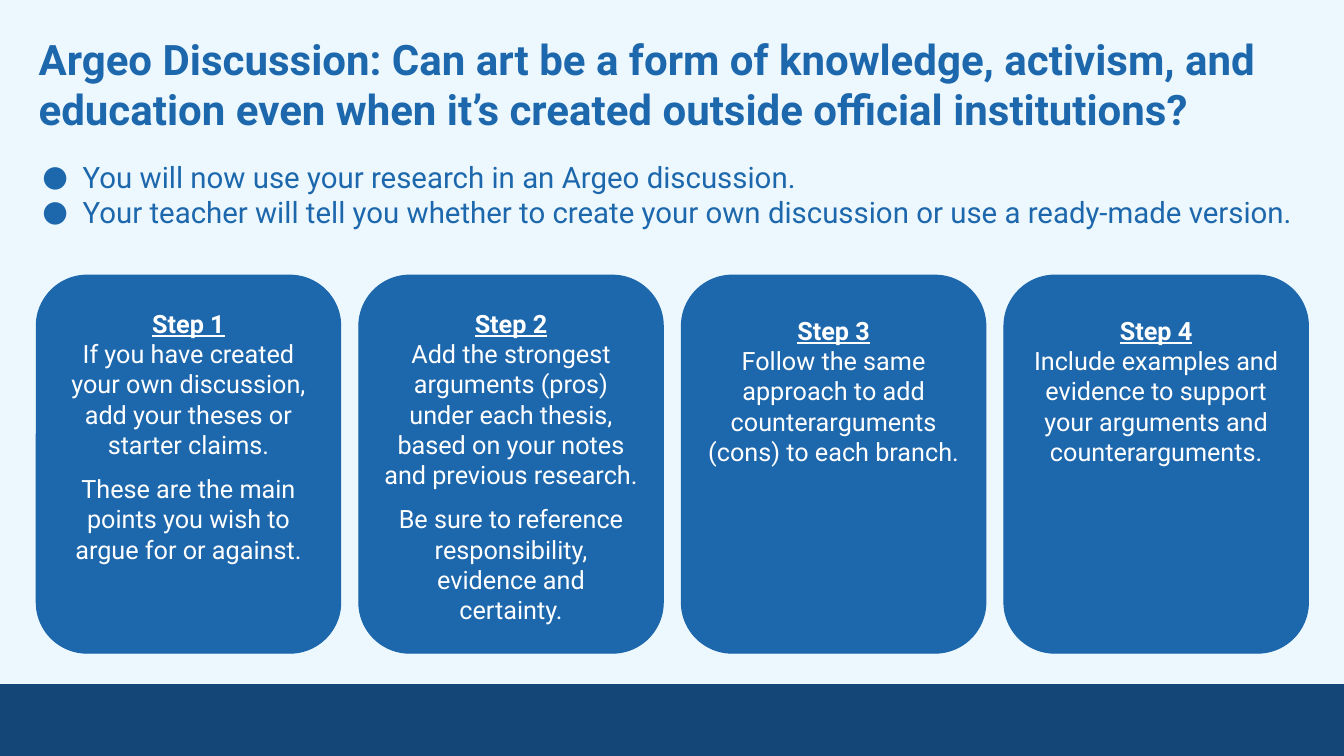
from lxml import etree
from pptx import Presentation
from pptx import util as u
from pptx.dml.color import RGBColor
from pptx.enum import shapes, text
from pptx.oxml.ns import qn

THEME = {
    "font": "Roboto",
    "sky": RGBColor.from_string("ECF8FE"),
    "blue": RGBColor.from_string("1D67AC"),
    "navy": RGBColor.from_string("144777"),
    "white": RGBColor.from_string("FFFFFF"),
    "title_size": u.Pt(30),
    "list_size": u.Pt(21),
    "step_size": u.Pt(18),
}

QUESTION = ("Argeo Discussion: Can art be a form of knowledge, activism, and "
            "education even when it’s created outside official institutions?")
INSTRUCTIONS = [
    "You will now use your research in a Argeo discussion.".replace("a Argeo", "an Argeo"),
    "Your teacher will tell you whether to create your own discussion or use a ready-made version.",
]
STEPS = [
    (0.18, ["If you have created your own discussion, add your theses or starter claims.",
            "These are the main points you wish to argue for or against."]),
    (0.18, ["Add the strongest arguments (pros) under each thesis, based on your notes and previous research.",
            "Be sure to reference responsibility, evidence and certainty."]),
    (0.25, ["Follow the same approach to add counterarguments (cons) to each branch."]),
    (0.25, ["Include examples and evidence to support your arguments and counterarguments."]),
]

deck = Presentation()
deck.slide_width, deck.slide_height = u.Inches(13.33), u.Inches(7.5)
slide = deck.slides.add_slide(deck.slide_layouts[1])
slide.background.fill.solid()
slide.background.fill.fore_color.rgb = THEME["sky"]


def box(left, top, width, height):
    return {
        "left": int(deck.slide_width * left),
        "top": int(deck.slide_height * top),
        "width": int(deck.slide_width * width),
        "height": int(deck.slide_height * height),
    }


def write(paragraph, wording, size, color, bold=False, underline=False):
    run = paragraph.add_run()
    run.text = wording
    run.font.color.rgb = THEME[color]
    looks = {"name": THEME["font"], "size": THEME[size], "bold": bold, "underline": underline}
    for key, value in looks.items():
        setattr(run.font, key, value)


footer = slide.shapes.add_shape(shapes.MSO_SHAPE.RECTANGLE, **box(0, 0.905, 1, 0.095))
footer.shadow.inherit = False
footer.fill.solid()
footer.fill.fore_color.rgb = THEME["navy"]
footer.line.fill.background()

question = slide.shapes.title
instructions = slide.placeholders[1]
for holder, place, inset in [
    (question, box(0.019, 0.027, 0.962, 0.17), 0.13),
    (instructions, box(0.0165, 0.197, 0.968, 0.121), 0.1),
]:
    for key, value in place.items():
        setattr(holder, key, value)
    frame = holder.text_frame
    frame.word_wrap = True
    frame.auto_size = text.MSO_AUTO_SIZE.NONE
    frame.vertical_anchor = text.MSO_ANCHOR.TOP
    for side in ("left", "top", "right", "bottom"):
        setattr(frame, f"margin_{side}", u.Inches(inset))

heading = question.text_frame.paragraphs[0]
heading.alignment = text.PP_ALIGN.LEFT
write(heading, QUESTION, "title_size", "blue", bold=True)

for index, wording in enumerate(INSTRUCTIONS):
    frame = instructions.text_frame
    item = frame.add_paragraph() if index else frame.paragraphs[0]
    item.space_before = u.Pt(0)
    layout = item._p.get_or_add_pPr()
    layout.set("marL", str(u.Inches(0.5)))
    layout.set("indent", str(u.Inches(-0.4)))
    bullet_color = etree.SubElement(layout, qn("a:buClr"))
    etree.SubElement(bullet_color, qn("a:srgbClr"), val=str(THEME["blue"]))
    etree.SubElement(layout, qn("a:buFont"), typeface=THEME["font"])
    etree.SubElement(layout, qn("a:buChar"), char="●")
    write(item, wording, "list_size", "blue")

for column, (inset, sentences) in enumerate(STEPS):
    step = slide.shapes.add_shape(
        shapes.MSO_SHAPE.ROUNDED_RECTANGLE, **box(0.027 + 0.24 * column, 0.364, 0.2265, 0.5))
    step.adjustments[0] = 0.167
    step.shadow.inherit = False
    step.fill.solid()
    step.fill.fore_color.rgb = THEME["blue"]
    step.line.color.rgb = THEME["blue"]
    step.line.width = u.Pt(0.75)
    frame = step.text_frame
    frame.word_wrap = True
    frame.vertical_anchor = text.MSO_ANCHOR.TOP
    frame.margin_left = frame.margin_right = frame.margin_bottom = u.Inches(0.1)
    frame.margin_top = u.Inches(inset)
    label = frame.paragraphs[0]
    label.alignment = text.PP_ALIGN.CENTER
    write(label, f"Step {column + 1}", "step_size", "white", bold=True, underline=True)
    for order, sentence in enumerate(sentences):
        line = frame.add_paragraph()
        line.alignment = text.PP_ALIGN.CENTER
        line.space_before = u.Pt(10 * order)
        write(line, sentence, "step_size", "white")

deck.save("out.pptx")
